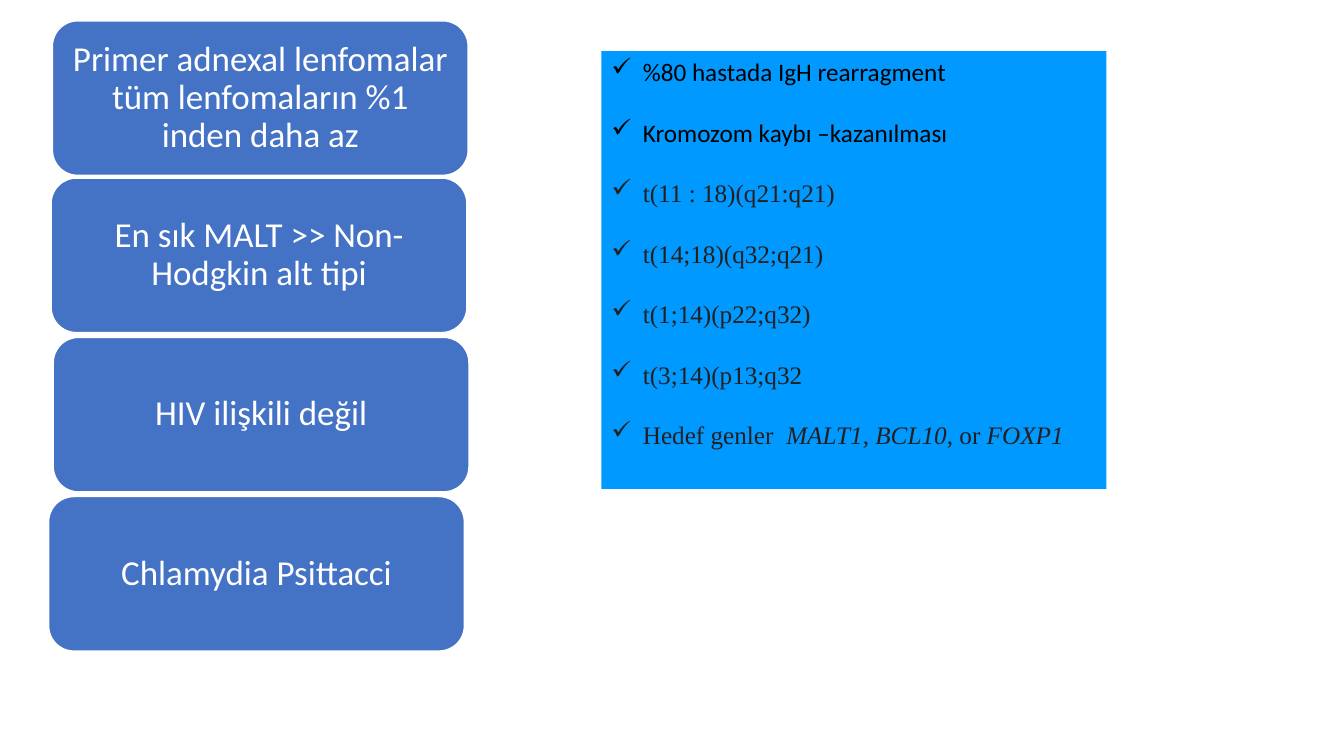
"""Build the slide on primary adnexal lymphomas and their genetic changes."""
from lxml.etree import SubElement
from pptx import Presentation
from pptx.dml.color import RGBColor
from pptx.enum.shapes import MSO_SHAPE as Preset
from pptx.enum.text import MSO_ANCHOR as Anchor, PP_ALIGN as Align
from pptx.oxml.ns import qn
from pptx.util import Pt

COLORS = {"card": "4472C4", "panel": "0099FF", "white": "FFFFFF", "black": "000000", "ink": "242021"}
SANS, SERIF = "Calibri", "Times New Roman"

FACTS = [
    ("Primer adnexal lenfomalar tüm lenfomaların %1 inden daha az", 36.9, 14.4),
    ("En sık MALT >> Non-Hodgkin alt tipi", 36, 126.7),
    ("HIV ilişkili değil", 37.5, 240.5),
    ("Chlamydia Psittacci", 34.2, 354.2),
]
CARD_SIZE = (298, 111.4)

PANEL = (429.6, 36.6, 360.7, 312.7)
GENETICS = [
    (SANS, "black", ["%80 hastada IgH rearragment"]),
    (SANS, "black", ["Kromozom kaybı –kazanılması"]),
    (SERIF, "ink", ["t(11 : 18)(q21:q21)"]),
    (SERIF, "ink", ["t(14;18)(q32;q21)"]),
    (SERIF, "ink", ["t(1;14)(p22;q32)"]),
    (SERIF, "ink", ["t(3;14)(p13;q32"]),
    (SERIF, "ink", ["Hedef genler  ", "MALT1", ", ", "BCL10", ", or ", "FOXP1"]),
]
INDENT, LINE, GAP = 22.5, 22, 21.2


def color(name):
    return RGBColor.from_string(COLORS[name])


def add_box(page, preset, bounds, fill):
    box = page.shapes.add_shape(preset, *map(Pt, bounds))
    box.shadow.inherit = False
    box.fill.solid()
    box.fill.fore_color.rgb = color(fill)
    box.text_frame.word_wrap = True
    return box


def set_font(para, name, size, tint):
    para.font.name, para.font.size = name, Pt(size)
    para.font.color.rgb = color(tint)


def add_check(para):
    props = para._p.get_or_add_pPr()
    props.set("marL", str(Pt(INDENT)))
    props.set("indent", str(-Pt(INDENT)))
    bullet_font = SubElement(props, qn("a:buFont"), typeface="Wingdings")
    bullet_font.addnext(SubElement(props, qn("a:buChar"), char="ü"))


def add_cards(page):
    for text, left, top in FACTS:
        card = add_box(page, Preset.ROUNDED_RECTANGLE, (left, top, *CARD_SIZE), "card")
        card.line.color.rgb = color("white")
        card.line.width = Pt(2)
        card.text_frame.vertical_anchor = Anchor.MIDDLE
        para = card.text_frame.paragraphs[0]
        para.text, para.alignment, para.line_spacing = text, Align.CENTER, 0.9
        set_font(para, SANS, 25, "white")


def add_panel(page):
    panel = add_box(page, Preset.RECTANGLE, PANEL, "panel")
    panel.line.fill.background()
    frame = panel.text_frame
    frame.vertical_anchor = Anchor.TOP
    for index, (font, tint, parts) in enumerate(GENETICS):
        para = frame.add_paragraph() if index else frame.paragraphs[0]
        para.alignment = Align.LEFT
        para.line_spacing, para.space_after = Pt(LINE), Pt(GAP)
        add_check(para)
        set_font(para, font, 18, tint)
        for order, part in enumerate(parts):
            span = para.add_run()
            span.text = part
            if order % 2:
                span.font.italic = True


def main():
    deck = Presentation()
    deck.slide_width, deck.slide_height = Pt(960), Pt(540)
    page = deck.slides.add_slide(deck.slide_layouts[6])
    add_cards(page)
    add_panel(page)
    deck.save("out.pptx")


if __name__ == "__main__":
    main()
